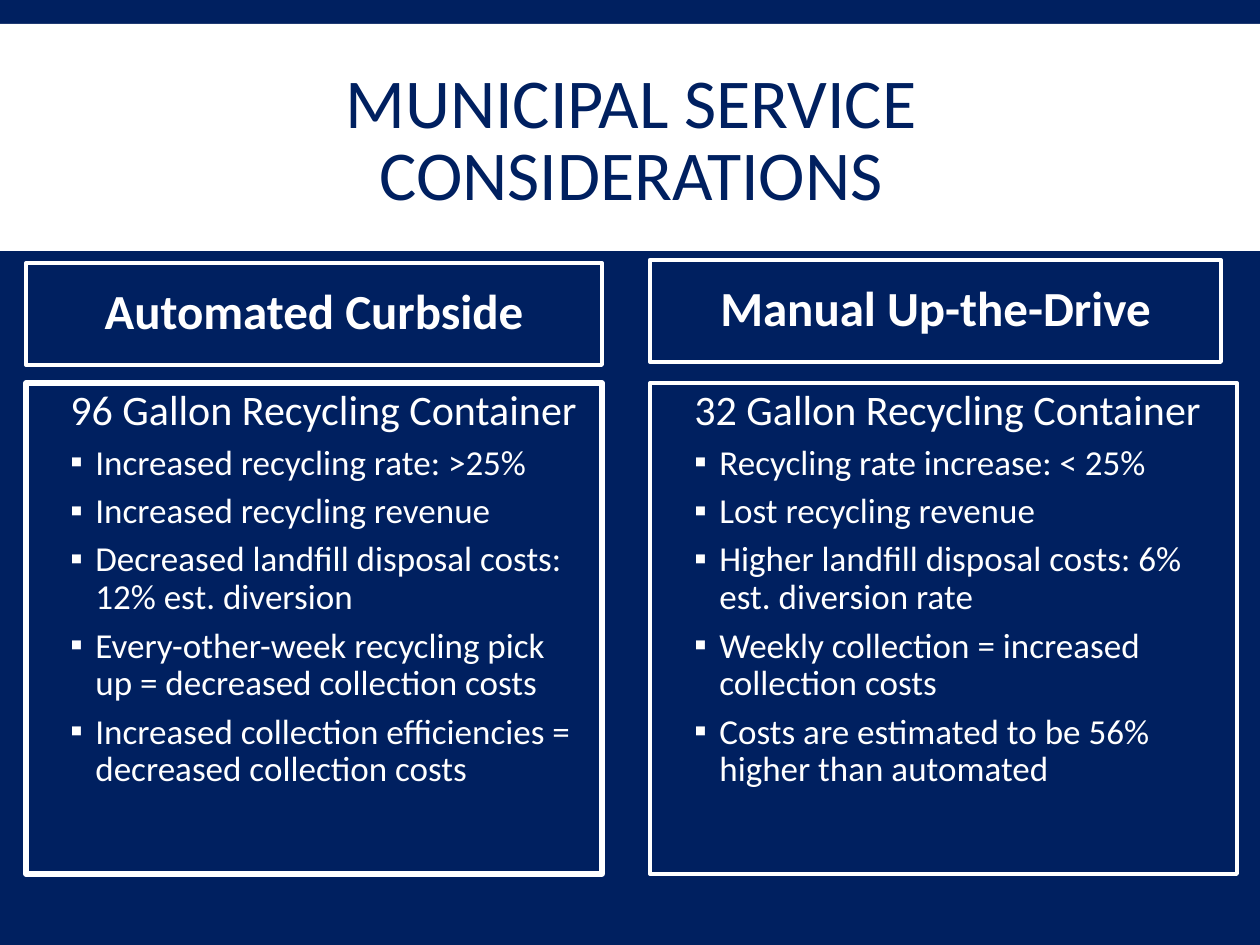
from lxml.etree import SubElement
from pptx import Presentation
from pptx.dml.color import RGBColor
from pptx.enum.shapes import MSO_SHAPE
from pptx.enum.text import MSO_ANCHOR, PP_ALIGN
from pptx.oxml.ns import qn
from pptx.util import Pt

PX = 914400 // 126
NAVY = RGBColor(0x00, 0x20, 0x60)
WHITE = RGBColor(0xFF, 0xFF, 0xFF)
FONT = "Calibri"

COLUMNS = [
    ((26, 263, 576, 102), (26, 383, 576, 491), 3, "Automated Curbside",
     "96 Gallon Recycling Container",
     ["Increased recycling rate: >25%",
      "Increased recycling revenue",
      "Decreased landfill disposal costs: 12% est. diversion",
      "Every-other-week recycling pick up = decreased collection costs",
      "Increased collection efficiencies = decreased collection costs"]),
    ((650, 260, 571, 102), (650, 383, 587, 491), 2.25, "Manual Up-the-Drive",
     "32 Gallon Recycling Container",
     ["Recycling rate increase: < 25%",
      "Lost recycling revenue",
      "Higher landfill disposal costs: 6% est. diversion rate",
      "Weekly collection = increased collection costs",
      "Costs are estimated to be 56% higher than automated"]),
]


def px(*values):
    return [v * PX for v in values]


def write(p, text, size, color=WHITE, bold=False, spacing=0.9):
    p.text = text
    p.line_spacing = spacing
    font = p.runs[0].font
    font.name, font.size, font.bold = FONT, Pt(size), bold
    font.color.rgb = color


def space(p, before, after):
    p.space_before, p.space_after = Pt(before), Pt(after)


def indent(p, left, first, bullet=None):
    pPr = p._p.get_or_add_pPr()
    pPr.set("marL", str(left * PX))
    pPr.set("indent", str(first * PX))
    if bullet:
        clr = SubElement(pPr, qn("a:buClr"))
        SubElement(clr, qn("a:srgbClr"), val=str(WHITE))
        SubElement(pPr, qn("a:buFont"), typeface=FONT)
        SubElement(pPr, qn("a:buChar"), char=bullet)


def add_title(s, text):
    title = s.shapes.title
    title.left, title.top, title.width, title.height = px(125, 39, 1012, 208)
    tf = title.text_frame
    tf.word_wrap = True
    tf.vertical_anchor = MSO_ANCHOR.MIDDLE
    p = tf.paragraphs[0]
    write(p, text, 40, NAVY, spacing=0.85)
    p.alignment = PP_ALIGN.CENTER


def add_band(s):
    band = s.shapes.add_shape(MSO_SHAPE.RECTANGLE, *px(0, 24, 1260, 227))
    band.shadow.inherit = False
    band.fill.solid()
    band.fill.fore_color.rgb = WHITE
    band.line.fill.background()
    s.shapes._spTree.insert(2, band._element)


def add_frame(s, box, weight, anchor):
    sp = s.shapes.add_textbox(*px(*box))
    sp.line.color.rgb = WHITE
    sp.line.width = Pt(weight)
    tf = sp.text_frame
    tf.word_wrap = True
    tf.vertical_anchor = anchor
    return tf


def add_heading(s, box, text):
    p = add_frame(s, box, 2.25, MSO_ANCHOR.MIDDLE).paragraphs[0]
    write(p, text, 28, bold=True)
    space(p, 12, 2)
    p.alignment = PP_ALIGN.CENTER


def add_list(s, box, weight, lead, items):
    tf = add_frame(s, box, weight, MSO_ANCHOR.TOP)
    p = tf.paragraphs[0]
    write(p, lead, 24)
    space(p, 2, 4)
    indent(p, 32, 0)
    for item in items:
        p = tf.add_paragraph()
        write(p, item, 20)
        space(p, 2, 4)
        indent(p, 57, -25, "▪")


def main():
    prs = Presentation()
    prs.slide_width, prs.slide_height = px(1260, 945)
    s = prs.slides.add_slide(prs.slide_layouts[5])
    s.background.fill.solid()
    s.background.fill.fore_color.rgb = NAVY
    add_band(s)
    add_title(s, "MUNICIPAL SERVICE CONSIDERATIONS")
    for heading_box, list_box, weight, heading, lead, items in COLUMNS:
        add_heading(s, heading_box, heading)
        add_list(s, list_box, weight, lead, items)
    prs.save("out.pptx")


if __name__ == "__main__":
    main()
